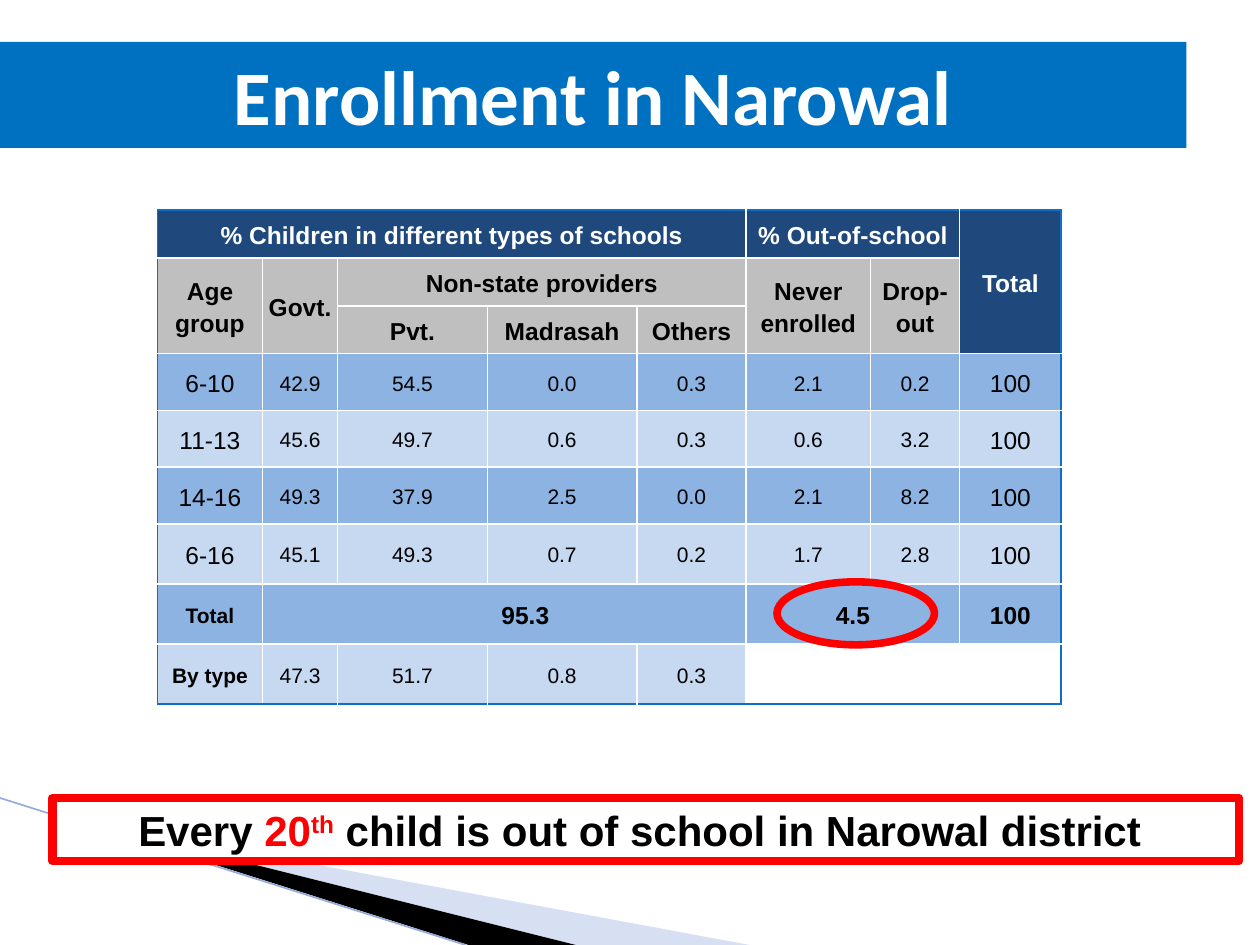
from lxml.etree import SubElement
from pptx import Presentation
from pptx.dml.color import RGBColor
from pptx.enum.shapes import MSO_CONNECTOR, MSO_SHAPE
from pptx.enum.text import MSO_ANCHOR, MSO_AUTO_SIZE, PP_ALIGN
from pptx.oxml.ns import qn
from pptx.util import Pt

COLORS = {
    "white": "FFFFFF", "black": "000000", "red": "FF0000", "banner": "0070C0",
    "navy": "1F497D", "gray": "BFBFBF", "blue": "8DB3E2", "pale": "C6D9F1",
    "frame": "0F6FC6", "wedge": "9DB2E1", "rule": "94ABDC",
}
TITLE = "Enrollment in Narowal"
CAPTION = [("Every ", "black", 0), ("20", "red", 0), ("th", "red", 30000),
           (" child is out of school in Narowal district ", "black", 0)]
ROWS = [
    ["% Children in different types of schools", "", "", "", "", "% Out-of-school", "", "Total"],
    ["Age group", "Govt.", "Non-state providers", "", "", "Never\nenrolled", "Drop-\nout", ""],
    ["", "", "Pvt.", "Madrasah", "Others", "", "", ""],
    ["6-10", "42.9", "54.5", "0.0", "0.3", "2.1", "0.2", "100"],
    ["11-13", "45.6", "49.7", "0.6", "0.3", "0.6", "3.2", "100"],
    ["14-16", "49.3", "37.9", "2.5", "0.0", "2.1", "8.2", "100"],
    ["6-16", "45.1", "49.3", "0.7", "0.2", "1.7", "2.8", "100"],
    ["Total", "95.3", "", "", "", "4.5", "", "100"],
    ["By type", "47.3", "51.7", "0.8", "0.3", "", "", ""],
]
# First and last cell of each merged block, as (row, column)
MERGES = [
    ((0, 0), (0, 4)), ((0, 5), (0, 6)), ((0, 7), (2, 7)),
    ((1, 0), (2, 0)), ((1, 1), (2, 1)), ((1, 2), (1, 4)),
    ((1, 5), (2, 5)), ((1, 6), (2, 6)),
    ((7, 1), (7, 4)), ((7, 5), (7, 6)), ((8, 5), (8, 6)),
]
COLUMN_WIDTHS = [60, 43, 85.5, 85.5, 62.5, 71, 51, 58]
ROW_HEIGHTS = [27.4] * 3 + [32.4] * 3 + [34.3] * 3
HEADER_ROWS, TOTAL_ROW, TYPE_ROW, LAST_COLUMN = 3, 7, 8, 7
WEDGES = [
    ("wedge", 40, [(39.6, 468), (428.4, 540), (328.3, 540)]),
    ("black", 100, [(38.2, 467.3), (329, 540), (267.8, 540)]),
]


def rgb(name):
    return RGBColor.from_string(COLORS[name])


def paint(fill, name):
    fill.solid()
    fill.fore_color.rgb = rgb(name)


def format_font(font, name, size, color, bold):
    font.name, font.size, font.bold = name, Pt(size), bold
    font.color.rgb = rgb(color)


def add_wedge(slide, color, opacity, points):
    builder = slide.shapes.build_freeform(Pt(points[0][0]), Pt(points[0][1]), scale=1)
    builder.add_line_segments([(Pt(x), Pt(y)) for x, y in points[1:]])
    shape = builder.convert_to_shape()
    shape.shadow.inherit = False
    shape.line.fill.background()
    paint(shape.fill, color)
    if opacity < 100:
        color_element = next(shape._element.spPr.iter(qn("a:srgbClr")))
        SubElement(color_element, qn("a:alpha")).set("val", str(opacity * 1000))


def add_outlined(slide, kind, box, width):
    """Add a preset shape with a red outline."""
    shape = slide.shapes.add_shape(kind, *map(Pt, box))
    shape.shadow.inherit = False
    shape.line.color.rgb = rgb("red")
    shape.line.width = Pt(width)
    return shape


def set_borders(cell, row, column):
    """Draw blue borders on the table's outer sides and white ones inside."""
    outer = {"lnL": column == 0, "lnR": column == LAST_COLUMN,
             "lnT": row == 0, "lnB": row == TYPE_ROW}
    properties = cell._tc.get_or_add_tcPr()
    for tag, is_outer in outer.items():
        line = SubElement(properties, qn(f"a:{tag}"), w=str(Pt(1)))
        fill = SubElement(line, qn("a:solidFill"))
        SubElement(fill, qn("a:srgbClr"), val=COLORS["frame" if is_outer else "white"])


def cell_fill(row, column):
    if row == 0 or (row < HEADER_ROWS and column == LAST_COLUMN):
        return "navy"
    if row < HEADER_ROWS:
        return "gray"
    if row == TYPE_ROW and column > 4:
        return None
    return "blue" if row % 2 else "pale"


def format_cell(cell, row, column, text):
    set_borders(cell, row, column)
    color = cell_fill(row, column)
    if color:
        paint(cell.fill, color)
    else:
        cell.fill.background()
    cell.vertical_anchor = MSO_ANCHOR.MIDDLE
    cell.margin_left = cell.margin_right = Pt(2.9)
    cell.margin_top = cell.margin_bottom = 0
    if not text:
        return
    in_data = HEADER_ROWS <= row < TOTAL_ROW
    small = ((in_data and 0 < column < LAST_COLUMN) or row == TYPE_ROW
             or (row == TOTAL_ROW and column == 0))
    bold = not in_data and not (row == TYPE_ROW and column > 0)
    cell.text_frame.text = text
    for paragraph in cell.text_frame.paragraphs:
        paragraph.alignment = PP_ALIGN.CENTER
        paragraph.line_spacing = 1.15
        if (row, column) == (TOTAL_ROW, 1):
            paragraph._p.get_or_add_pPr().set("indent", str(Pt(24)))
        for run in paragraph.runs:
            format_font(run.font, "Arial", 12 if small else 14,
                        "white" if color == "navy" else "black", bold)


def add_enrollment_table(slide):
    table = slide.shapes.add_table(
        len(ROWS), len(COLUMN_WIDTHS), Pt(90), Pt(120),
        Pt(sum(COLUMN_WIDTHS)), Pt(sum(ROW_HEIGHTS))).table
    for column, width in zip(table.columns, COLUMN_WIDTHS):
        column.width = Pt(width)
    for row, height in zip(table.rows, ROW_HEIGHTS):
        row.height = Pt(height)
    for first, last in MERGES:
        table.cell(*first).merge(table.cell(*last))
    for row, texts in enumerate(ROWS):
        for column, text in enumerate(texts):
            format_cell(table.cell(row, column), row, column, text)


def add_caption(slide):
    shape = add_outlined(slide, MSO_SHAPE.RECTANGLE, (30, 456, 678, 36), 5)
    paint(shape.fill, "white")
    SubElement(shape.line._get_or_add_ln(), qn("a:round"))
    frame = shape.text_frame
    frame.word_wrap = True
    frame.auto_size = MSO_AUTO_SIZE.SHAPE_TO_FIT_TEXT
    paragraph = frame.paragraphs[0]
    paragraph.alignment = PP_ALIGN.CENTER
    for text, color, baseline in CAPTION:
        run = paragraph.add_run()
        run.text = text
        format_font(run.font, "Arial", 24, color, True)
        if baseline:
            run._r.get_or_add_rPr().set("baseline", str(baseline))


def add_title(slide):
    title = slide.shapes.title
    title.left, title.top, title.width, title.height = map(Pt, (0, 24, 678, 60.5))
    paint(title.fill, "banner")
    frame = title.text_frame
    frame.text = TITLE
    frame.word_wrap = True
    frame.auto_size = MSO_AUTO_SIZE.SHAPE_TO_FIT_TEXT
    frame.paragraphs[0].alignment = PP_ALIGN.CENTER
    format_font(frame.paragraphs[0].runs[0].font, "Calibri", 44, "white", True)


def main():
    presentation = Presentation()
    presentation.slide_width, presentation.slide_height = Pt(720), Pt(540)
    slide = presentation.slides.add_slide(presentation.slide_layouts[5])
    add_title(slide)
    for color, opacity, points in WEDGES:
        add_wedge(slide, color, opacity, points)
    rule = slide.shapes.add_connector(
        MSO_CONNECTOR.STRAIGHT, 0, Pt(456), Pt(266), Pt(540))
    rule.line.color.rgb = rgb("rule")
    rule.line.width = Pt(0.95)
    SubElement(rule._element.spPr, qn("a:effectLst"))
    add_enrollment_table(slide)
    add_caption(slide)
    highlight = add_outlined(slide, MSO_SHAPE.OVAL, (444, 332.5, 90, 36), 4.33)
    highlight.fill.background()
    presentation.save("out.pptx")


if __name__ == "__main__":
    main()
